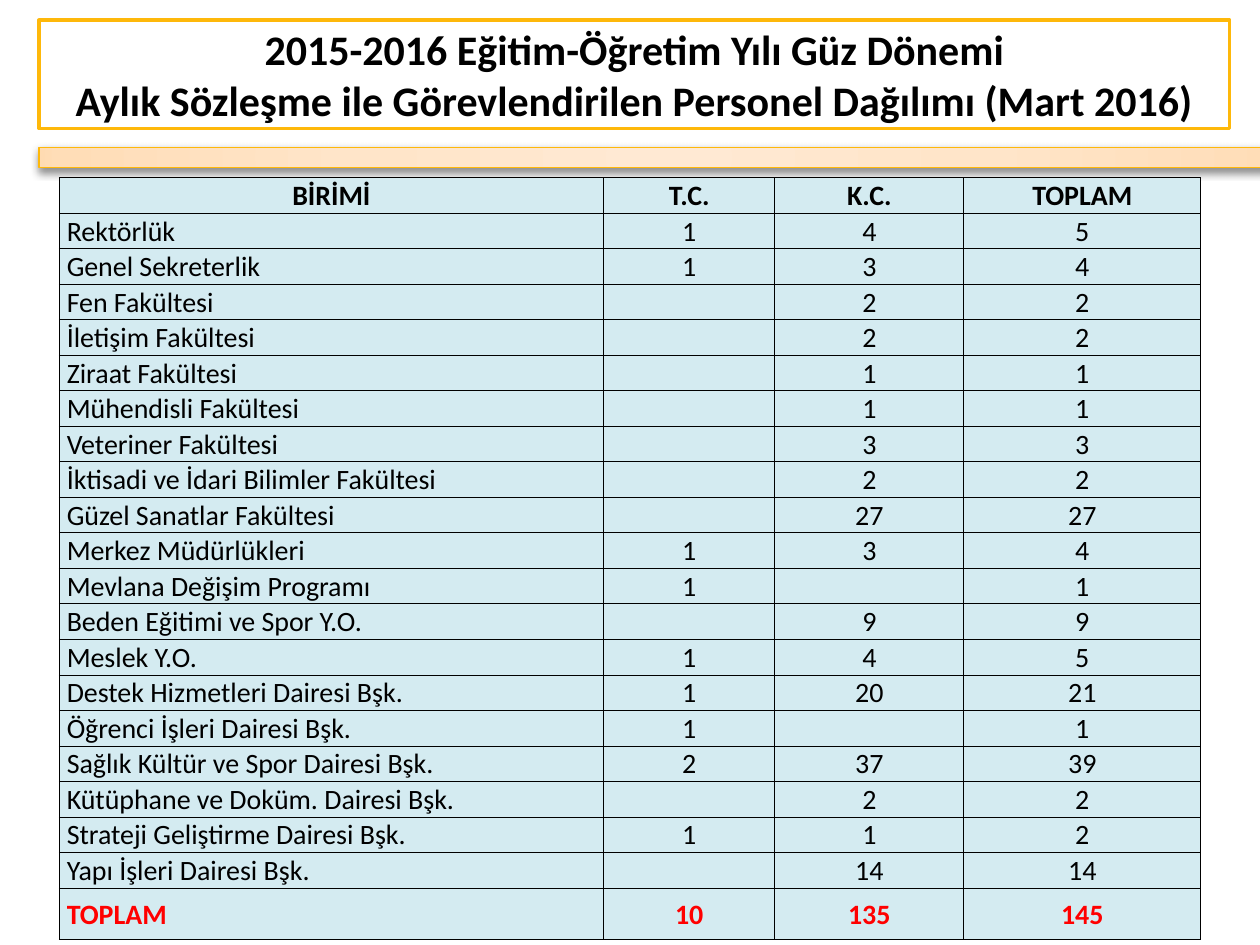
from lxml.etree import fromstring
from pptx import Presentation
from pptx.dml.color import RGBColor
from pptx.enum.shapes import MSO_SHAPE
from pptx.enum.text import MSO_ANCHOR, MSO_AUTO_SIZE, PP_ALIGN
from pptx.oxml.ns import nsdecls
from pptx.util import Inches, Pt

COLORS = {"text": "000000", "total": "FF0000", "cell": "D4EBF1",
          "border": "000000", "accent": "FEB80A", "paper": "FFFFFF"}
FONT = "Calibri"
TITLE = ("2015-2016 Eğitim-Öğretim Yılı Güz Dönemi\v"
         "Aylık Sözleşme ile Görevlendirilen Personel Dağılımı (Mart 2016)")
HEADER = ("BİRİMİ", "T.C.", "K.C.", "TOPLAM")
UNITS = [  # unit, T.C., K.C.
    ("Rektörlük", 1, 4),
    ("Genel Sekreterlik", 1, 3),
    ("Fen Fakültesi", 0, 2),
    ("İletişim Fakültesi", 0, 2),
    ("Ziraat Fakültesi", 0, 1),
    ("Mühendisli Fakültesi", 0, 1),
    ("Veteriner Fakültesi", 0, 3),
    ("İktisadi ve İdari Bilimler Fakültesi", 0, 2),
    ("Güzel Sanatlar Fakültesi", 0, 27),
    ("Merkez Müdürlükleri", 1, 3),
    ("Mevlana Değişim Programı", 1, 0),
    ("Beden Eğitimi ve Spor Y.O.", 0, 9),
    ("Meslek Y.O.", 1, 4),
    ("Destek Hizmetleri Dairesi Bşk.", 1, 20),
    ("Öğrenci İşleri Dairesi Bşk.", 1, 0),
    ("Sağlık Kültür ve Spor Dairesi Bşk.", 2, 37),
    ("Kütüphane ve Doküm. Dairesi Bşk.", 0, 2),
    ("Strateji Geliştirme Dairesi Bşk.", 1, 1),
    ("Yapı İşleri Dairesi Bşk.", 0, 14),
]
COLUMN_WIDTHS = (4.32, 1.36, 1.5, 1.88)
ROW_HEIGHT, TOTAL_HEIGHT = 0.27, 0.41
LEFT = 0.31
BAND_STOPS = ((0, "FFE9D3"), (50, "FFE5C9"), (97, "FFDDB7"), (100, "FFDBB2"))


def rgb(name):
    return RGBColor.from_string(COLORS[name])


def style_font(font, size, color="text", bold=False):
    font.name, font.size, font.bold = FONT, Pt(size), bold
    font.color.rgb = rgb(color)


def set_outline(shape, width):
    shape.line.color.rgb = rgb("accent")
    shape.line.width = Pt(width)


def add_title(page):
    title = page.shapes.title
    title.left, title.top = Inches(LEFT), Inches(0.16)
    title.width, title.height = Inches(9.45), Inches(0.86)
    title.fill.solid()
    title.fill.fore_color.rgb = rgb("paper")
    set_outline(title, 2)
    frame = title.text_frame
    frame.text = TITLE
    frame.word_wrap = True
    frame.auto_size = MSO_AUTO_SIZE.NONE
    frame.vertical_anchor = MSO_ANCHOR.MIDDLE
    para = frame.paragraphs[0]
    para.alignment = PP_ALIGN.CENTER
    for span in para.runs:
        style_font(span.font, 24, bold=True)


def add_band(page):
    """Add the shadowed bar under the title, with a radial gradient."""
    band = page.shapes.add_shape(MSO_SHAPE.RECTANGLE, Inches(LEFT), Inches(1.17),
                                 Inches(10), Inches(0.16))
    set_outline(band, 0.75)
    stops = "".join(f'<a:gs pos="{place * 1000}"><a:srgbClr val="{color}"/></a:gs>'
                    for place, color in BAND_STOPS)
    gradient = fromstring(
        f'<a:gradFill {nsdecls("a")} rotWithShape="1"><a:gsLst>{stops}</a:gsLst>'
        '<a:path path="circle"><a:fillToRect l="50000" t="50000" r="50000" b="50000"/>'
        '</a:path></a:gradFill>')
    shadow = fromstring(
        f'<a:effectLst {nsdecls("a")}><a:outerShdw blurRad="{Pt(5)}" dist="{Pt(2)}" '
        'dir="5400000" rotWithShape="0"><a:srgbClr val="000000"><a:alpha val="43000"/>'
        '</a:srgbClr></a:outerShdw></a:effectLst>')
    properties = band.element.spPr
    properties.find("{*}ln").addprevious(gradient)
    properties.append(shadow)


def add_borders(cell):
    properties = cell._tc.get_or_add_tcPr()
    for index, side in enumerate("LRTB"):
        properties.insert(index, fromstring(
            f'<a:ln{side} {nsdecls("a")} w="{Pt(0.5)}"><a:solidFill>'
            f'<a:srgbClr val="{COLORS["border"]}"/></a:solidFill></a:ln{side}>'))


def fill_cell(cell, value, centred, color, bold):
    cell.margin_left = Inches(0.01 if centred else 0.06)
    cell.margin_right = cell.margin_top = Inches(0.01)
    cell.margin_bottom = 0
    cell.vertical_anchor = MSO_ANCHOR.MIDDLE
    cell.fill.solid()
    cell.fill.fore_color.rgb = rgb("cell")
    add_borders(cell)
    para = cell.text_frame.paragraphs[0]
    para.text = str(value or "")
    para.alignment = PP_ALIGN.CENTER if centred else PP_ALIGN.LEFT
    style_font(para.font, 16, color, bold)
    for span in para.runs:
        style_font(span.font, 16, color, bold)


def add_staff_table(page):
    counts = [(unit, tc, kc, tc + kc) for unit, tc, kc in UNITS]
    totals = [sum(column) for column in list(zip(*counts))[1:]]
    rows = [HEADER, *counts, ("TOPLAM", *totals)]
    last = len(rows) - 1
    heights = [ROW_HEIGHT] * last + [TOTAL_HEIGHT]
    table = page.shapes.add_table(
        len(rows), len(HEADER), Inches(0.47), Inches(1.41),
        Inches(sum(COLUMN_WIDTHS)), Inches(sum(heights))).table
    table.horz_banding = False
    for column, width in zip(table.columns, COLUMN_WIDTHS):
        column.width = Inches(width)
    for r, (values, height) in enumerate(zip(rows, heights)):
        table.rows[r].height = Inches(height)
        for c, value in enumerate(values):
            fill_cell(table.cell(r, c), value, centred=r == 0 or c > 0,
                      color="total" if r == last else "text", bold=r in (0, last))


def main():
    deck = Presentation()
    deck.slide_width, deck.slide_height = Inches(10), Inches(7.5)
    page = deck.slides.add_slide(deck.slide_layouts[5])
    add_title(page)
    add_band(page)
    add_staff_table(page)
    deck.save("out.pptx")


if __name__ == "__main__":
    main()
